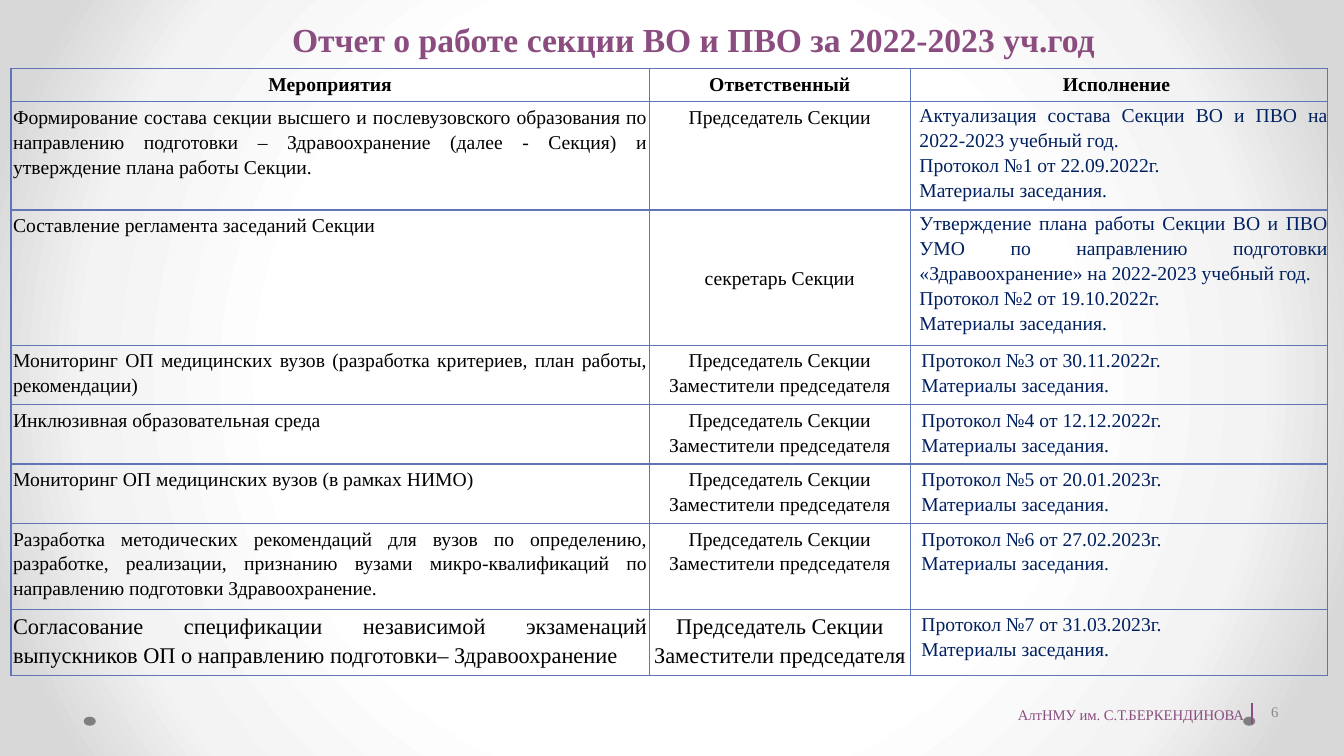
import pptx
import pptx.util
import pptx.oxml
import pptx.oxml.ns
import pptx.dml.color
import pptx.enum.text
import pptx.enum.shapes

Inches, Pt = pptx.util.Inches, pptx.util.Pt
RGB = pptx.dml.color.RGBColor
ALIGN = pptx.enum.text.PP_ALIGN
MIDDLE = pptx.enum.text.MSO_ANCHOR.MIDDLE
SHAPE = pptx.enum.shapes.MSO_SHAPE
LINE = pptx.enum.shapes.MSO_CONNECTOR.STRAIGHT

PLUM = RGB(0x8B, 0x4D, 0x80)
NAVY = RGB(0x00, 0x20, 0x60)
BLACK = RGB(0, 0, 0)
GRAY = RGB(0x88, 0x88, 0x88)
DOT = RGB(0x7F, 0x7F, 0x7F)
BORDER = RGB(0x60, 0x76, 0xB4)
GLOW = [(0, RGB(255, 255, 255)), (50, RGB(255, 255, 255)),
        (76, RGB(0xF3, 0xF3, 0xF3)), (92, RGB(0xD8, 0xD8, 0xD8)),
        (100, RGB(0xD8, 0xD8, 0xD8))]

HEAD = ["Мероприятия", "Ответственный", "Исполнение "]
CHAIR = "Председатель Секции"
BOTH = CHAIR + "\nЗаместители председателя"
DONE = "Протокол №{} от {}г.\nМатериалы заседания. "
# task, who is responsible, result before the protocol, date, row height
PLAN = [
    ("Формирование состава секции высшего и послевузовского образования по "
     "направлению подготовки – Здравоохранение (далее - Секция) и утверждение "
     "плана работы Секции.", CHAIR,
     "Актуализация состава Секции ВО и ПВО на 2022-2023 учебный год.\n",
     "22.09.2022", 1.07),
    ("Составление регламента заседаний Секции ", "секретарь Секции",
     "Утверждение плана работы Секции ВО и ПВО УМО по направлению подготовки "
     "«Здравоохранение» на 2022-2023 учебный год.\n", "19.10.2022", 1.34),
    ("Мониторинг ОП медицинских вузов (разработка критериев, план работы, "
     "рекомендации)", BOTH, "", "30.11.2022", 0.59),
    ("Инклюзивная образовательная среда ", BOTH, "", "12.12.2022", 0.59),
    ("Мониторинг ОП медицинских вузов (в рамках НИМО)", BOTH, "",
     "20.01.2023", 0.59),
    ("Разработка методических рекомендаций для вузов по определению, "
     "разработке, реализации, признанию вузами микро-квалификаций по "
     "направлению подготовки Здравоохранение.", BOTH, "", "27.02.2023", 0.85),
    ("Согласование спецификации независимой экзаменаций выпускников ОП о "
     "направлению подготовки– Здравоохранение ", BOTH, "", "31.03.2023", 0.66),
]


def xml(tag, attrs, body):
    space = pptx.oxml.ns.nsdecls("a")
    return pptx.oxml.parse_xml(f"<a:{tag} {space} {attrs}>{body}</a:{tag}>")


def write(frame, text, size=14, color=BLACK, bold=False, align=ALIGN.CENTER,
          space=None, indent=0):
    """Fill a text frame, one paragraph for each line of text."""
    frame.word_wrap = True
    for i, line in enumerate(text.split("\n")):
        para = frame.add_paragraph() if i else frame.paragraphs[0]
        para.alignment = align
        para.line_spacing = space
        if indent:
            props = para._p.get_or_add_pPr()
            props.set("marL", str(Inches(indent)))
            props.set("indent", "0")
        run = para.add_run()
        run.text = line
        font = run.font
        font.name, font.size, font.bold = "Times New Roman", Pt(size), bold
        font.color.rgb = color


def inset(box, side, top):
    box.margin_left = box.margin_right = Inches(side)
    box.margin_top = box.margin_bottom = Inches(top)


class Page:
    def __init__(self, deck):
        self.slide = deck.slides.add_slide(deck.slide_layouts[6])
        self.shapes = self.slide.shapes

    def glow(self, stops):
        """Set a round gradient as the background."""
        self.slide.background.fill.gradient()
        old = self.slide.element.xpath(".//p:bgPr/a:gradFill")[0]
        marks = "".join(f'<a:gs pos="{pos * 1000}"><a:srgbClr val="{color}"/>'
                        "</a:gs>" for pos, color in stops)
        half = 'l="50000" t="50000" r="50000" b="50000"'
        old.getparent().replace(old, xml(
            "gradFill", 'rotWithShape="1"',
            f'<a:gsLst>{marks}</a:gsLst><a:path path="circle">'
            f"<a:fillToRect {half}/></a:path>"))

    def dot(self, x, y):
        dot = self.shapes.add_shape(SHAPE.OVAL, Inches(x), Inches(y),
                                    Inches(0.12), Inches(0.09))
        dot.shadow.inherit = False
        dot.fill.solid()
        dot.fill.fore_color.rgb = DOT
        dot.line.fill.background()

    def label(self, text, x, y, w, h, side=0, top=0, **form):
        box = self.shapes.add_textbox(Inches(x), Inches(y),
                                      Inches(w), Inches(h))
        inset(box.text_frame, side, top)
        write(box.text_frame, text, **form)

    def rule(self, x, top, end):
        line = self.shapes.add_connector(LINE, Inches(x), Inches(top),
                                         Inches(x), Inches(end))
        line.line.color.rgb = PLUM
        line.line.width = Pt(1.5)
        line._element.spPr.append(xml("effectLst", "", ""))

    def grid(self, x, y, cols, rows):
        table = self.shapes.add_table(
            len(rows), len(cols), Inches(x), Inches(y),
            Inches(sum(cols)), Inches(sum(rows))).table
        table.first_row = table.horz_banding = False
        for col, width in zip(table.columns, cols):
            col.width = Inches(width)
        for row, height in zip(table.rows, rows):
            row.height = Inches(height)
        for cell in table.iter_cells():
            inset(cell, 0.02, 0.02)
            props = cell._tc.get_or_add_tcPr()
            for tag in ("lnL", "lnR", "lnT", "lnB"):
                props.append(xml(tag, f'w="{Pt(1)}"', "<a:solidFill><a:srgbClr "
                                 f'val="{BORDER}"/></a:solidFill>'))
            cell.fill.background()
        return table


def main():
    deck = pptx.Presentation()
    deck.slide_width, deck.slide_height = Inches(13.33), Inches(7.5)
    page = Page(deck)
    page.glow(GLOW)
    for x in (12.33, 0.83):
        page.dot(x, 7.11)
    page.label("Отчет о работе секции ВО и ПВО за 2022-2023 уч.год ",
               0.79, 0.18, 12.26, 0.41, top=0.01, size=24, color=PLUM,
               bold=True)
    page.label("6", 9.61, 6.97, 3.07, 0.18, size=10.5, color=GRAY,
               align=ALIGN.RIGHT)
    page.label("АлтНМУ им. С.Т.БЕРКЕНДИНОВА", 9.26, 6.87, 3.18, 0.37, side=0.1,
               top=0.05, size=10.5, color=PLUM, align=ALIGN.RIGHT, space=1.5)
    page.rule(12.42, 6.97, 7.18)

    table = page.grid(0.11, 0.68, [6.33, 2.59, 4.14],
                      [0.33] + [item[-1] for item in PLAN])
    for col, text in enumerate(HEAD):
        write(table.cell(0, col).text_frame, text, bold=True, space=1.15)
    for num, (task, who, result, date, _) in enumerate(PLAN, 1):
        left, mid, right = (table.cell(num, col) for col in range(3))
        size = 16 if num == len(PLAN) else 14
        write(left.text_frame, task, size=size, align=ALIGN.JUSTIFY, space=1.15)
        write(mid.text_frame, who, size=size, space=1.15)
        if result:
            inset(right, 0, 0)
        write(right.text_frame, result + DONE.format(num, date), color=NAVY,
              align=ALIGN.JUSTIFY, space=1.15, indent=0.09)
    table.cell(2, 1).vertical_anchor = MIDDLE
    deck.save("out.pptx")


if __name__ == "__main__":
    main()
